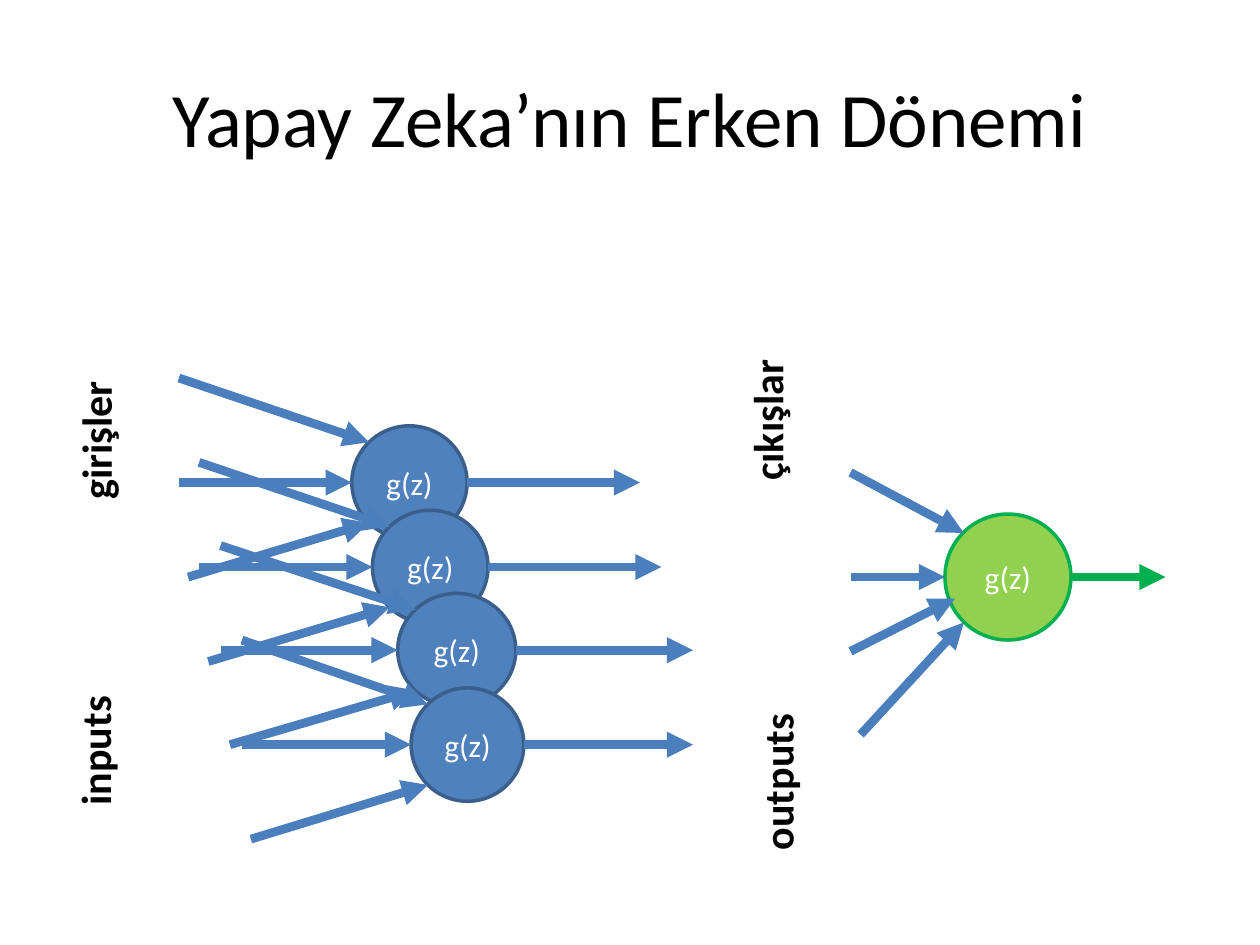
import pptx
import pptx.util
import pptx.dml.color
import pptx.enum.shapes
import pptx.enum.text
import pptx.oxml
import pptx.oxml.ns
import lxml.etree

Inches = pptx.util.Inches
ALIGN = pptx.enum.text.PP_ALIGN
ANCHOR = pptx.enum.text.MSO_ANCHOR
SHAPE = pptx.enum.shapes.MSO_SHAPE

COLORS = {
    "blue": "4F81BD", "edge": "3A5F8C", "arrow": "4B7EBC",
    "lime": "92D050", "green": "00B050", "white": "FFFFFF", "black": "000000",
}
TITLE = "Yapay Zeka’nın Erken Dönemi"
NODE = "g(z)"

# text, left, top, width
LABELS = [
    ("girişler", 0.18, 3.24, 1.15),
    ("çıkışlar", 5.5, 3.08, 1.17),
    ("inputs", 0.21, 5.7, 1.08),
    ("outputs", 5.52, 5.95, 1.29),
]
# left, top, width of each hidden neuron with its arrows
HIDDEN = [
    (1.42, 3, 3.66), (1.58, 3.67, 3.67), (1.75, 4.33, 3.75), (1.92, 5.08, 3.58),
]
# start and end: x as a share of the neuron's width, y in inches from its top
WIRES = [
    (0, 0, 0.4125, 0.51), (0, 0.83, 0.375, 0.83),
    (0.02, 1.58, 0.4125, 1.15), (0.625, 0.83, 1, 0.83),
]
OUTPUT = (7.5, 4.08, 1, 1)
OUT_WIRES = [
    (6.75, 3.75, 7.65, 4.23, "arrow"), (6.75, 4.58, 7.5, 4.58, "arrow"),
    (6.75, 5.17, 7.58, 4.75, "arrow"), (8.5, 4.58, 9.25, 4.58, "green"),
    (6.83, 5.83, 7.65, 4.94, "arrow"),
]


def color(name):
    return pptx.dml.color.RGBColor.from_string(COLORS[name])


def write(frame, text, size, tone, align, bold=False, **layout):
    for key, value in layout.items():
        setattr(frame, key, value)
    para = frame.paragraphs[0]
    para.alignment = align
    run = para.add_run()
    run.text = text
    style = {"name": "Calibri", "size": pptx.util.Pt(size), "bold": bold}
    for key, value in style.items():
        setattr(run.font, key, value)
    run.font.color.rgb = color(tone)


def stroke(line, tone, width):
    line.color.rgb = color(tone)
    line.width = pptx.util.Pt(width)


def add_node(slide, box, fill, edge):
    node = slide.shapes.add_shape(SHAPE.OVAL, *map(Inches, box))
    node.shadow.inherit = False
    node.fill.solid()
    node.fill.fore_color.rgb = color(fill)
    stroke(node.line, edge, 2)
    write(node.text_frame, NODE, 18, "white", ALIGN.CENTER,
          vertical_anchor=ANCHOR.MIDDLE, margin_left=0, margin_right=0)


def add_arrow(slide, ends, tone="arrow"):
    kind = pptx.enum.shapes.MSO_CONNECTOR.STRAIGHT
    arrow = slide.shapes.add_connector(kind, *map(Inches, ends))
    stroke(arrow.line, tone, 5)
    qn = pptx.oxml.ns.qn
    props = arrow._element.spPr
    lxml.etree.SubElement(props.find(qn("a:ln")), qn("a:tailEnd"), type="triangle")
    lxml.etree.SubElement(props, qn("a:effectLst"))


def add_hidden(slide, left, top, width):
    box = (left + 0.375 * width, top + 0.38, 0.25 * width, 0.9)
    add_node(slide, box, "blue", "edge")
    for x1, y1, x2, y2 in WIRES:
        add_arrow(slide, (left + x1 * width, top + y1, left + x2 * width, top + y2))


def add_label(slide, text, left, top, width):
    box = slide.shapes.add_textbox(*map(Inches, (left, top, width, 0.5)))
    box.rotation = 270
    write(box.text_frame, text, 24, "black", ALIGN.LEFT, bold=True, word_wrap=False,
          auto_size=pptx.enum.text.MSO_AUTO_SIZE.SHAPE_TO_FIT_TEXT)


def main():
    deck = pptx.Presentation()
    deck.slide_width, deck.slide_height = Inches(10), Inches(7.5)
    slide = deck.slides.add_slide(deck.slide_layouts[5])

    title = slide.shapes.title
    place = {"left": 0.5, "top": 0.3, "width": 9, "height": 1.25}
    for key, value in place.items():
        setattr(title, key, Inches(value))
    write(title.text_frame, TITLE, 44, "black", ALIGN.CENTER,
          vertical_anchor=ANCHOR.MIDDLE)

    for neuron in HIDDEN:
        add_hidden(slide, *neuron)
    add_node(slide, OUTPUT, "lime", "green")
    for *ends, tone in OUT_WIRES:
        add_arrow(slide, ends, tone)
    for label in LABELS:
        add_label(slide, *label)
    deck.save("out.pptx")


if __name__ == "__main__":
    main()
